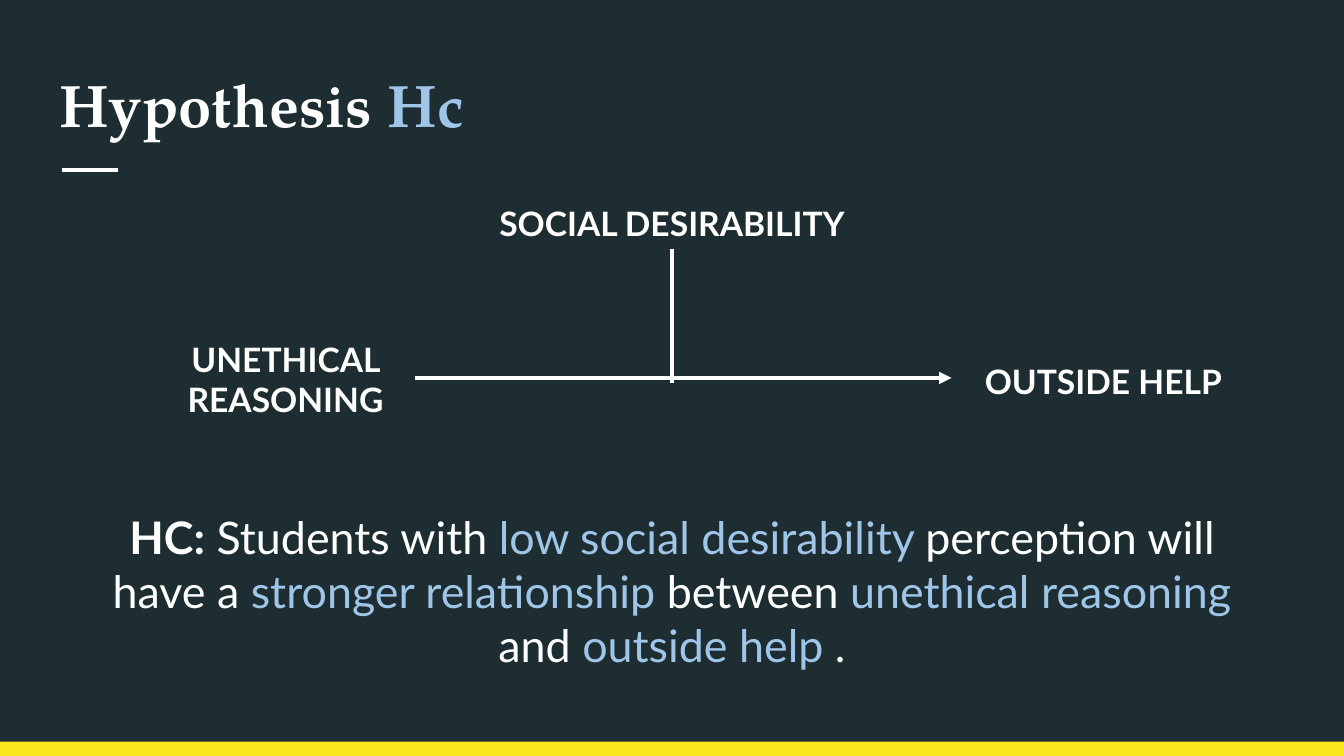
import dataclasses

import pptx
import pptx.dml.color
import pptx.enum.shapes
import pptx.enum.text
import pptx.oxml
import pptx.oxml.ns
import pptx.util

ALIGN = pptx.enum.text.PP_ALIGN
ANCHOR = pptx.enum.text.MSO_ANCHOR
WIDTH = pptx.util.Inches(10)
HEIGHT = pptx.util.Emu(WIDTH * 9 // 16)


@dataclasses.dataclass(frozen=True)
class Theme:
    background: str = "1E2D31"
    text: str = "FFFFFF"
    accent: str = "9FC5E8"
    bar: str = "F8E71C"
    heading_font: str = "TeX Gyre Pagella"
    body_font: str = "Lato"
    title_size: int = 32
    label_size: int = 18
    statement_size: int = 24
    line_width: float = 2.25


THEME = Theme()


def rgb(color):
    return pptx.dml.color.RGBColor.from_string(color)


def x(percent):
    """Horizontal length as a percentage of the slide width."""
    return round(WIDTH * percent / 100)


def y(percent):
    """Vertical length as a percentage of the slide height."""
    return round(HEIGHT * percent / 100)


def box(left, top, width, height):
    return x(left), y(top), x(width), y(height)


def format_frame(tf, anchor=ANCHOR.TOP):
    tf.word_wrap = True
    tf.auto_size = pptx.enum.text.MSO_AUTO_SIZE.NONE
    tf.vertical_anchor = anchor
    inset = pptx.util.Inches(0.1)
    tf.margin_left = tf.margin_right = tf.margin_top = tf.margin_bottom = inset


def add_runs(p, runs, font, size):
    """Add (text, color, bold) runs to a paragraph."""
    for text, color, bold in runs:
        r = p.add_run()
        r.text = text
        r.font.name = font
        r.font.size = pptx.util.Pt(size)
        r.font.bold = bold
        r.font.color.rgb = rgb(color)


def add_title(slide, bounds, runs):
    sp = slide.shapes.title
    sp.left, sp.top, sp.width, sp.height = bounds
    format_frame(sp.text_frame, ANCHOR.MIDDLE)
    p = sp.text_frame.paragraphs[0]
    p.alignment = ALIGN.LEFT
    add_runs(p, runs, THEME.heading_font, THEME.title_size)


def add_text(slide, bounds, runs, size):
    sp = slide.shapes.add_textbox(*bounds)
    format_frame(sp.text_frame)
    p = sp.text_frame.paragraphs[0]
    p.alignment = ALIGN.CENTER
    add_runs(p, runs, THEME.body_font, size)
    return p


def add_label(slide, bounds, text):
    return add_text(slide, bounds, [(text, THEME.text, True)], THEME.label_size)


def add_line(slide, start, end, arrow=False):
    line = slide.shapes.add_connector(
        pptx.enum.shapes.MSO_CONNECTOR.STRAIGHT,
        x(start[0]), y(start[1]), x(end[0]), y(end[1]))
    line.line.color.rgb = rgb(THEME.text)
    line.line.width = pptx.util.Pt(THEME.line_width)
    props = line._element.spPr
    if arrow:
        head = pptx.oxml.parse_xml(
            f'<a:tailEnd {pptx.oxml.ns.nsdecls("a")} type="triangle"/>')
        props.find(pptx.oxml.ns.qn("a:ln")).append(head)
    props.append(pptx.oxml.parse_xml(
        f'<a:effectLst {pptx.oxml.ns.nsdecls("a")}/>'))


def add_bar(slide, bounds):
    sp = slide.shapes.add_shape(
        pptx.enum.shapes.MSO_SHAPE.RECTANGLE, *bounds)
    sp.shadow.inherit = False
    sp.fill.solid()
    sp.fill.fore_color.rgb = rgb(THEME.bar)
    sp.line.fill.background()


def main():
    prs = pptx.Presentation()
    prs.slide_width, prs.slide_height = WIDTH, HEIGHT
    slide = prs.slides.add_slide(prs.slide_layouts[5])
    slide.background.fill.solid()
    slide.background.fill.fore_color.rgb = rgb(THEME.background)

    # Footer bar and title with its short rule
    add_bar(slide, box(0, 98.1, 100, 1.9))
    add_line(slide, (4.6, 22.45), (8.8, 22.45))
    add_title(slide, box(3.4, 7.3, 93.2, 12.7), [
        ("Hypothesis", THEME.text, True),
        (" Hc", THEME.accent, True),
    ])

    # Variables of the moderation model
    moderator = add_label(slide, box(29.2, 24.2, 41.6, 8.7),
                          "SOCIAL DESIRABILITY")
    moderator.line_spacing = 1.15
    moderator.space_after = pptx.util.Pt(16)
    add_label(slide, box(11.6, 43, 19.3, 13.9), "UNETHICAL REASONING")
    add_label(slide, box(70.8, 46, 22.6, 8), "OUTSIDE HELP")

    # Main effect and the moderator's path onto it
    add_line(slide, (30.9, 50), (70.8, 50), arrow=True)
    add_line(slide, (50, 32.9), (50, 50.7))

    # Hypothesis statement
    add_text(slide, box(6.6, 65.65, 86.8, 15.3), [
        ("HC:", THEME.text, True),
        (" Students with ", THEME.text, False),
        ("low social desirability ", THEME.accent, False),
        ("perception will have a ", THEME.text, False),
        ("stronger relationship", THEME.accent, False),
        (" between ", THEME.text, False),
        ("unethical reasoning ", THEME.accent, False),
        ("and ", THEME.text, False),
        ("outside help ", THEME.accent, False),
        (".", THEME.text, False),
    ], THEME.statement_size)

    prs.save("out.pptx")


if __name__ == "__main__":
    main()
